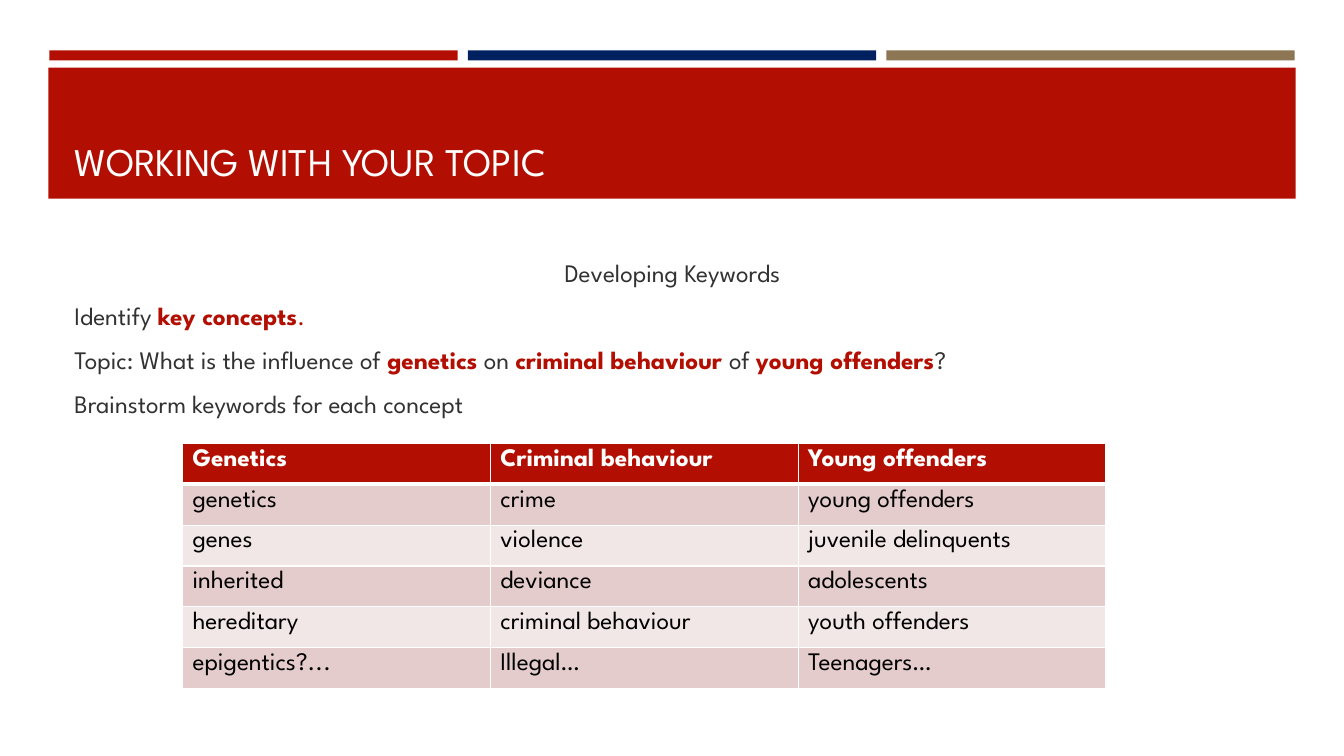
from lxml.etree import SubElement
from pptx import Presentation
from pptx.dml.color import RGBColor
from pptx.enum.shapes import MSO_SHAPE
from pptx.enum.text import MSO_ANCHOR, PP_ALIGN
from pptx.oxml.ns import qn
from pptx.util import Inches, Pt

COLORS = {
    "red": "B20F02", "navy": "002060", "tan": "8D7654", "white": "FFFFFF",
    "ink": "323232", "black": "000000", "rose": "E4CCCC", "blush": "F2E7E7",
}


class TopicSlide:
    """Holds the slide and its style and draws each kind of element."""

    font_name = "League Spartan"

    def __init__(self, slide):
        self.slide = slide

    def color(self, name):
        return RGBColor.from_string(COLORS[name])

    def band(self, left, top, width, height, fill):
        band = self.slide.shapes.add_shape(
            MSO_SHAPE.RECTANGLE, *map(Inches, (left, top, width, height)))
        band.shadow.inherit = False
        band.fill.solid()
        band.fill.fore_color.rgb = self.color(fill)
        band.line.fill.background()

    def add_words(self, paragraph, text, color, size=18, bold=False):
        run = paragraph.add_run()
        run.text = text
        style = {"name": self.font_name, "size": Pt(size), "bold": bold}
        for attribute, value in style.items():
            setattr(run.font, attribute, value)
        run.font.color.rgb = self.color(color)

    def text_frame(self, left, top, width, height, **layout):
        box = self.slide.shapes.add_textbox(*map(Inches, (left, top, width, height)))
        for attribute, value in {"word_wrap": True, **layout}.items():
            setattr(box.text_frame, attribute, value)
        return box.text_frame

    def title(self, text):
        frame = self.text_frame(0.64, 0.77, 12.06, 1.11, vertical_anchor=MSO_ANCHOR.BOTTOM)
        self.add_words(frame.paragraphs[0], text, "white", size=28)

    def body(self, lines):
        frame = self.text_frame(0.64, 2.17, 12.06, 3.61, margin_top=Inches(0.33))
        for index, (alignment, pieces) in enumerate(lines):
            paragraph = frame.add_paragraph() if index else frame.paragraphs[0]
            layout = {"alignment": alignment, "line_spacing": Pt(25.2), "space_after": Pt(6)}
            for attribute, value in layout.items():
                setattr(paragraph, attribute, value)
            for text, color, bold in pieces:
                self.add_words(paragraph, text, color, bold=bold)

    def border(self, cell, widths):
        properties = cell._tc.get_or_add_tcPr()
        for position, (side, width) in enumerate(widths.items()):
            line = properties.makeelement(qn(f"a:{side}"), {"w": str(Pt(width))})
            fill = SubElement(line, qn("a:solidFill"))
            SubElement(fill, qn("a:srgbClr"), val=COLORS["white"])
            properties.insert(position, line)

    def keyword_table(self, rows):
        table = self.slide.shapes.add_table(
            len(rows), len(rows[0]), *map(Inches, (1.81, 4.4, 9.16, 2.43))).table
        for row_index, words in enumerate(rows):
            header = row_index == 0
            fill = "red" if header else ("blush", "rose")[row_index % 2]
            widths = {"lnL": 1, "lnR": 1, "lnT": 3 if row_index == 1 else 1,
                      "lnB": 3 if header else 1}
            for column_index, word in enumerate(words):
                cell = table.cell(row_index, column_index)
                cell.fill.solid()
                cell.fill.fore_color.rgb = self.color(fill)
                self.border(cell, widths)
                self.add_words(cell.text_frame.paragraphs[0], word,
                               "white" if header else "black", bold=header)


def main():
    presentation = Presentation()
    presentation.slide_width = Inches(13.33)
    presentation.slide_height = Inches(7.5)
    topic = TopicSlide(presentation.slides.add_slide(presentation.slide_layouts[6]))

    for index, accent in enumerate(("red", "navy", "tan")):
        topic.band(0.49 + index * 4.15, 0.5, 4.05, 0.1, accent)
    topic.band(0.48, 0.67, 12.37, 1.3, "red")
    topic.title("WORKING WITH YOUR TOPIC")

    topic.body([
        (PP_ALIGN.CENTER, [("Developing Keywords", "ink", False)]),
        (PP_ALIGN.LEFT, [("Identify ", "ink", False), ("key concepts", "red", True),
                         (".", "red", False)]),
        (PP_ALIGN.LEFT, [("Topic: What is the influence of ", "ink", False),
                         ("genetics", "red", True), (" on ", "ink", False),
                         ("criminal behaviour ", "red", True), ("of ", "ink", False),
                         ("young offenders", "red", True), ("?", "ink", False)]),
        (PP_ALIGN.LEFT, [("Brainstorm keywords for each concept", "ink", False)]),
    ])
    topic.keyword_table([
        ("Genetics", "Criminal behaviour", "Young offenders"),
        ("genetics", "crime", "young offenders"),
        ("genes", "violence", "juvenile delinquents"),
        ("inherited", "deviance", "adolescents"),
        ("hereditary", "criminal behaviour", "youth offenders"),
        ("epigentics?...", "Illegal…", "Teenagers…"),
    ])
    presentation.save("out.pptx")


if __name__ == "__main__":
    main()
